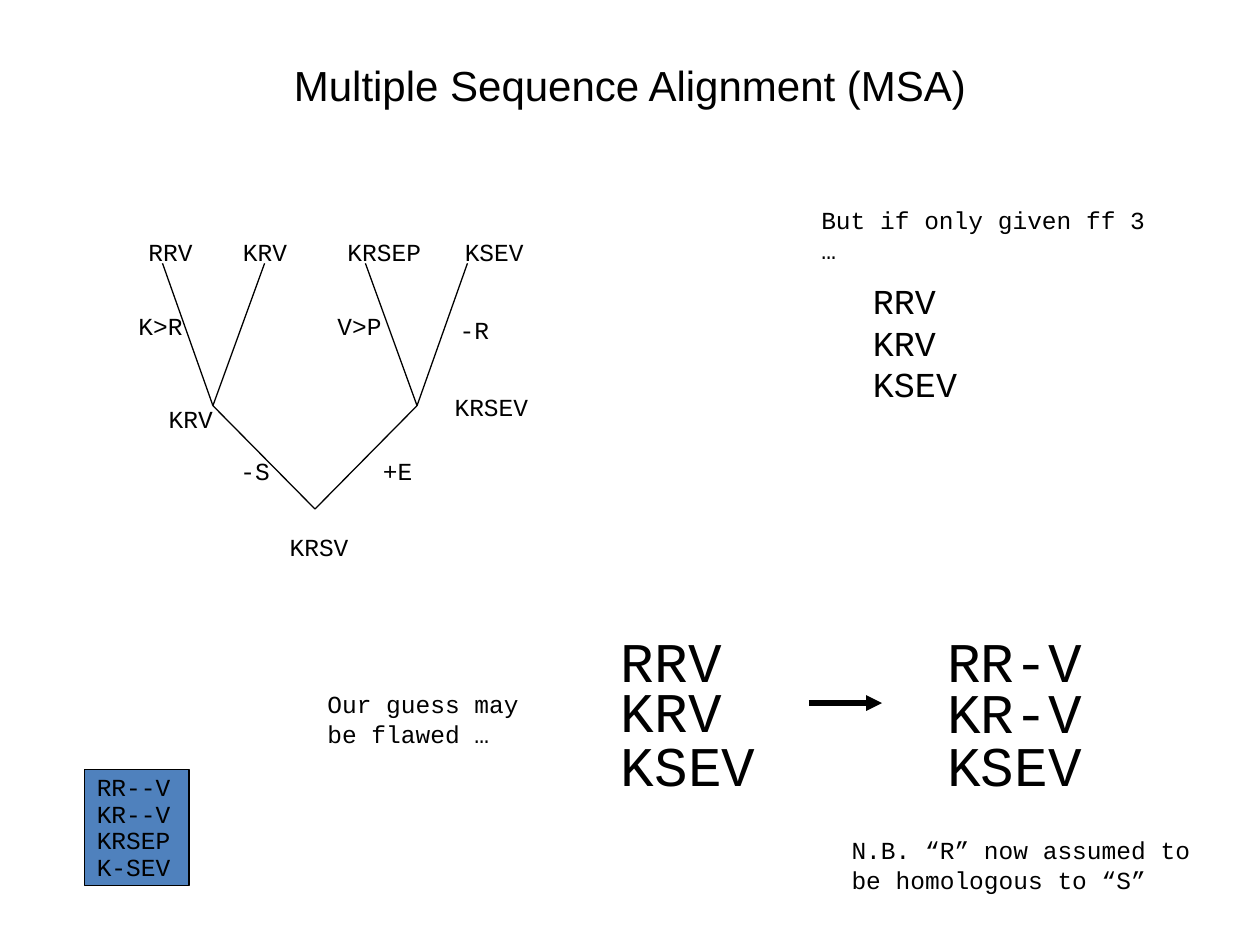
from pptx import Presentation
from pptx.dml.color import RGBColor
from pptx.enum.shapes import MSO_CONNECTOR as Connector, MSO_SHAPE as Shape
from pptx.enum.text import MSO_ANCHOR as Anchor, PP_ALIGN as Align
from pptx.oxml.ns import qn
from pptx.util import Emu, Pt
from lxml.etree import SubElement

BLACK = RGBColor(0x00, 0x00, 0x00)
BLUE = RGBColor(0x4F, 0x81, 0xBD)
SCALE = 9144  # EMU per px, 100 px to the inch
MONO = "Courier New"
SANS = "Arial"


def px(length):
    return Emu(round(length * SCALE))


class Canvas:
    """Holds the slide and its style; one method per kind of element."""

    def __init__(self, slide, color=BLACK):
        self.slide = slide
        self.color = color

    def text(self, left, top, width, height, lines, size=14, font=MONO,
             wrap=True, align=Align.LEFT, anchor=Anchor.TOP):
        box = self.slide.shapes.add_textbox(px(left), px(top), px(width), px(height))
        frame = box.text_frame
        frame.word_wrap = wrap
        frame.vertical_anchor = anchor
        for index, line in enumerate(lines):
            paragraph = frame.add_paragraph() if index else frame.paragraphs[0]
            paragraph.alignment = align
            run = paragraph.add_run()
            run.text = line
            run.font.size = Pt(size)
            run.font.name = font
            run.font.color.rgb = self.color

    def label(self, left, top, line, size=14):
        """One monospaced line in a box that fits it."""
        width = len(line) * size * 0.6 / 0.72 + 20
        self.text(left, top, width, size * 5 / 3 + 10, [line], size, wrap=False)

    def column(self, left, tops, lines, size=14):
        for top, line in zip(tops, lines):
            self.label(left, top, line, size)

    def line(self, start, end, weight=0.75, arrow=False):
        connector = self.slide.shapes.add_connector(
            Connector.STRAIGHT, *map(px, start + end))
        connector.line.color.rgb = self.color
        connector.line.width = Pt(weight)
        if arrow:
            SubElement(connector.line._get_or_add_ln(), qn("a:tailEnd"), type="triangle")
        SubElement(connector._element.spPr, qn("a:effectLst"))

    def rectangle(self, left, top, width, height, fill):
        shape = self.slide.shapes.add_shape(
            Shape.RECTANGLE, px(left), px(top), px(width), px(height))
        shape.shadow.inherit = False
        shape.fill.solid()
        shape.fill.fore_color.rgb = fill
        shape.line.color.rgb = self.color
        shape.line.width = Pt(0.75)


def main():
    presentation = Presentation()
    presentation.slide_width, presentation.slide_height = px(1000), px(750)
    canvas = Canvas(presentation.slides.add_slide(presentation.slide_layouts[6]))

    # Title
    canvas.text(75, 42, 850, 50, ["Multiple Sequence Alignment (MSA)"], 24, SANS,
                align=Align.CENTER, anchor=Anchor.MIDDLE)

    # Evolutionary tree: root, two inner nodes, four tips
    root = (250, 404)
    for node_x, tip_xs in ((169, (129, 210)), (331, (290, 371))):
        node = (node_x, 322)
        canvas.line(node, root)
        for tip_x in tip_xs:
            canvas.line((tip_x, 209), node)

    # Sequences and mutations on the tree
    for left, top, line in (
        (108, 183, "RRV"), (183, 183, "KRV"), (266, 183, "KRSEP"), (359, 183, "KSEV"),
        (100, 242, "K>R"), (258, 242, "V>P"), (355, 245, "-R"),
        (124, 316, "KRV"), (351, 306, "KRSEV"),
        (181, 357, "-S"), (294, 357, "+E"), (220, 417, "KRSV"),
    ):
        canvas.label(left, top, line)

    # The three given sequences
    given = ("RRV", "KRV", "KSEV")
    canvas.text(642, 158, 300, 33, ["But if only given ff 3 …"])
    canvas.column(683, range(217, 284, 33), given, 20)

    # True alignment
    canvas.rectangle(67, 611, 83, 92, BLUE)
    canvas.column(67, range(608, 672, 21), ("RR--V", "KR--V", "KRSEP", "K-SEV"))

    # Guessed alignment
    canvas.text(250, 542, 184, 57, ["Our guess may", "be flawed …"])
    canvas.column(483, (492, 532, 575), given, 32)
    canvas.line((642, 558), (700, 558), 3, arrow=True)
    canvas.column(742, (492, 533, 575), ("RR-V", "KR-V", "KSEV"), 32)
    canvas.text(666, 658, 309, 57, ["N.B. “R” now assumed to be homologous to “S”"])

    presentation.save("out.pptx")


if __name__ == "__main__":
    main()
